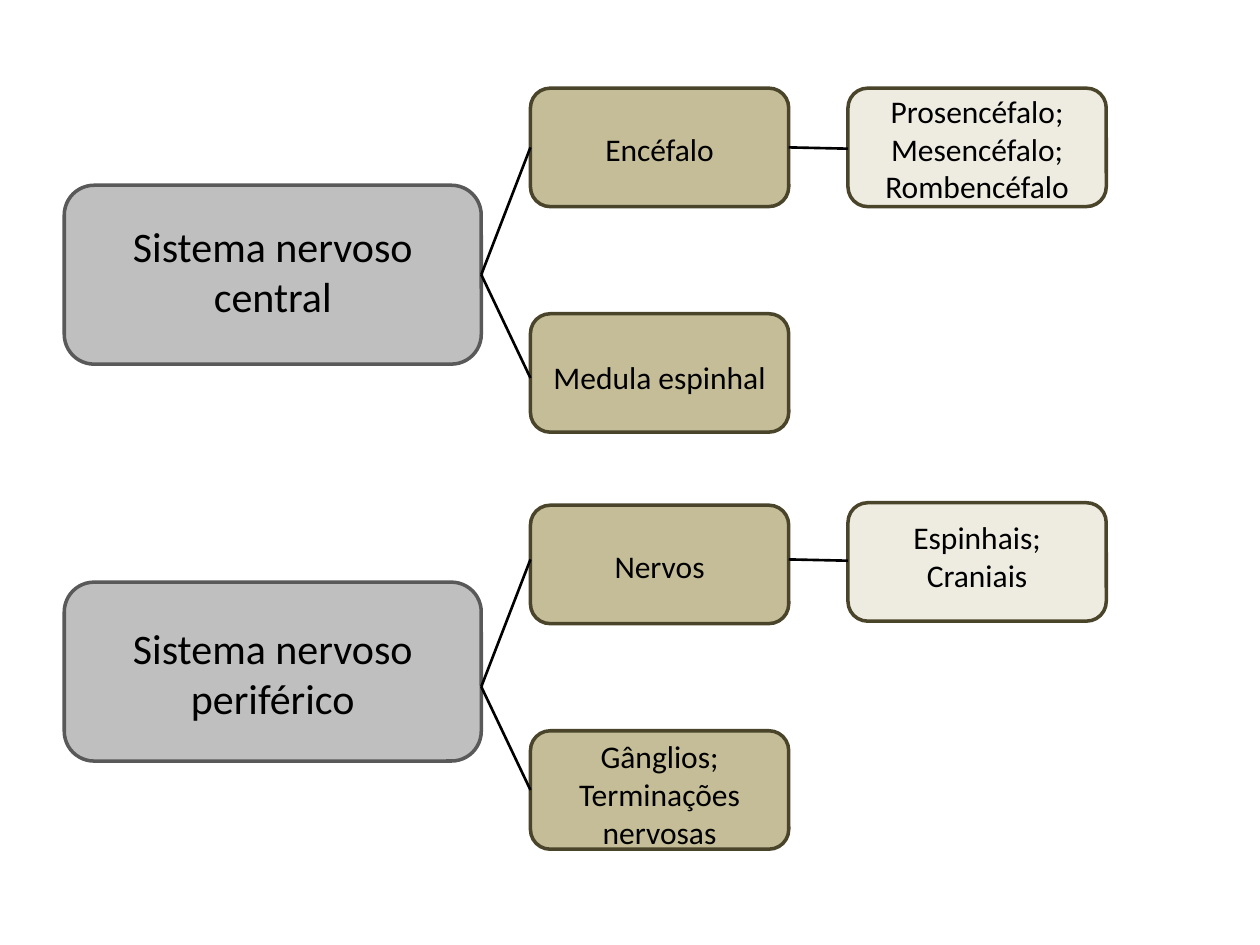
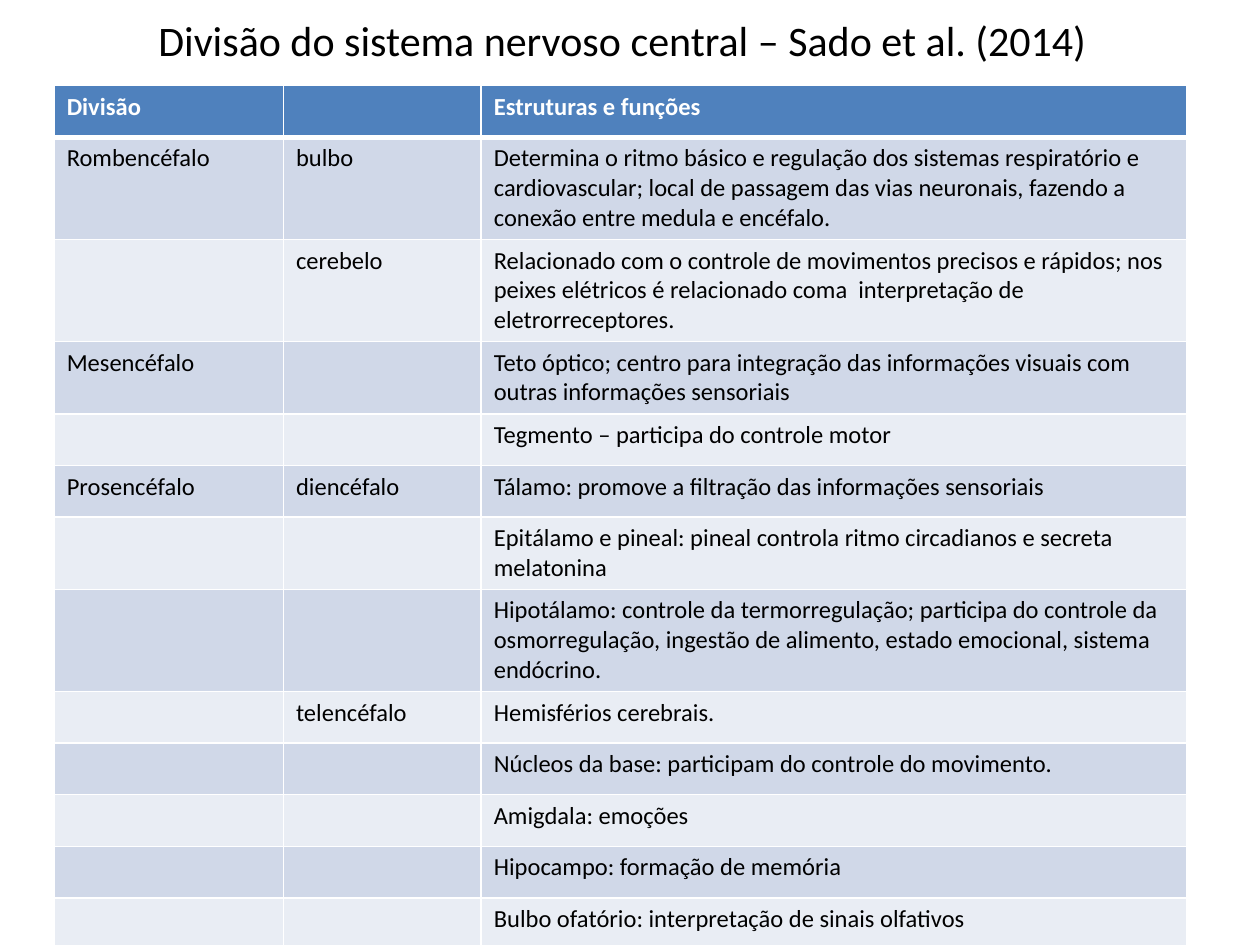
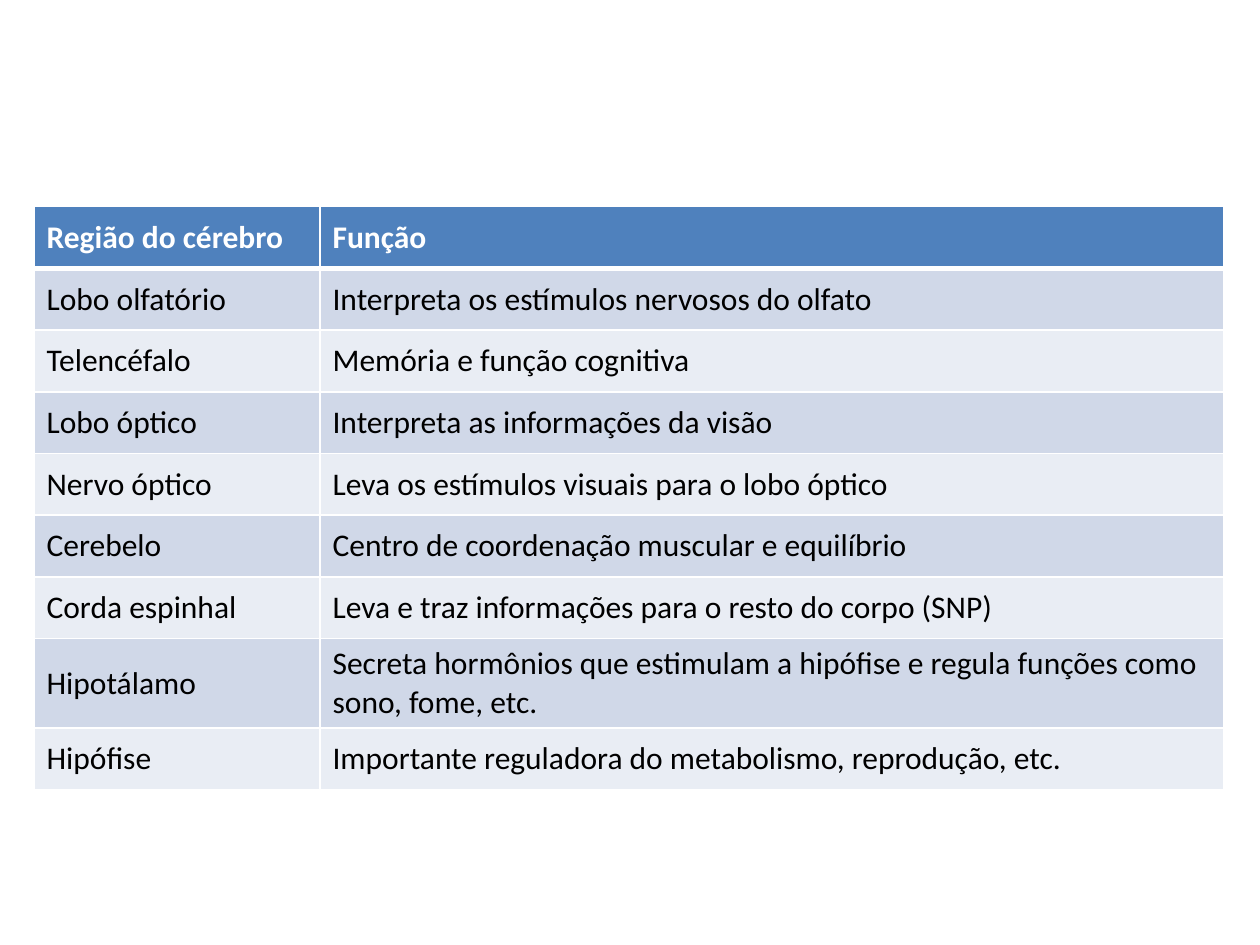
from lxml import etree
from pptx import Presentation
from pptx.dml.color import RGBColor
from pptx.enum import shapes, text
from pptx.oxml import ns
from pptx.util import Inches, Pt

FONT = "Calibri"
COLORS = {
    "black": "000000", "white": "FFFFFF",
    "system": "BFBFBF", "system_edge": "595959",
    "part": "C4BD97", "detail": "EEECE1", "part_edge": "4A452A",
    "header": "4F81BD", "band_dark": "D0D8E8", "band_light": "E9EDF4",
}
TITLE_ONLY, BLANK = 5, 6


def rgb(name):
    return RGBColor.from_string(COLORS[name])


def write(frame, content, size=18, color="black", bold=False, align=None):
    """Fill a text frame, one paragraph for each line of content."""
    for number, line in enumerate(content.split("\n")):
        paragraph = frame.add_paragraph() if number else frame.paragraphs[0]
        paragraph.alignment = align
        paragraph.font.size = Pt(size)
        if line:
            run = paragraph.add_run()
            run.text = line
            run.font.name, run.font.size = FONT, Pt(size)
            run.font.bold, run.font.color.rgb = bold, rgb(color)


def set_borders(cell, top=1, bottom=1):
    """Draw white cell borders; they must precede the fill in the XML."""
    properties = cell._tc.get_or_add_tcPr()
    widths = {"lnL": 1, "lnR": 1, "lnT": top, "lnB": bottom}
    for position, (tag, width) in enumerate(widths.items()):
        border = etree.Element(ns.qn(f"a:{tag}"), w=str(Pt(width)))
        fill = etree.SubElement(border, ns.qn("a:solidFill"))
        etree.SubElement(fill, ns.qn("a:srgbClr"), val=COLORS["white"])
        properties.insert(position, border)


class Deck:
    def __init__(self):
        self.file = Presentation()
        self.file.slide_width, self.file.slide_height = Inches(10), Inches(7.5)
        self.slide = None

    def new_slide(self, layout=BLANK):
        self.slide = self.file.slides.add_slide(self.file.slide_layouts[layout])

    def title(self, content, left, top, width, height):
        title = self.slide.shapes.title
        title.left, title.top = Inches(left), Inches(top)
        title.width, title.height = Inches(width), Inches(height)
        title.text_frame.vertical_anchor = text.MSO_ANCHOR.MIDDLE
        write(title.text_frame, content, size=24, align=text.PP_ALIGN.CENTER)

    def box(self, left, top, width, height, fill, edge):
        box = self.slide.shapes.add_shape(
            shapes.MSO_SHAPE.ROUNDED_RECTANGLE,
            Inches(left), Inches(top), Inches(width), Inches(height))
        box.shadow.inherit = False
        box.fill.solid()
        box.fill.fore_color.rgb = rgb(fill)
        box.line.color.rgb, box.line.width = rgb(edge), Pt(2)

    def label(self, content, left, top, width, height, size=18):
        frame = self.slide.shapes.add_textbox(
            Inches(left), Inches(top), Inches(width), Inches(height)).text_frame
        frame.word_wrap = True
        frame.auto_size = text.MSO_AUTO_SIZE.SHAPE_TO_FIT_TEXT
        write(frame, content, size=size, align=text.PP_ALIGN.CENTER)

    def line(self, x1, y1, x2, y2):
        line = self.slide.shapes.add_connector(
            shapes.MSO_CONNECTOR.STRAIGHT,
            Inches(x1), Inches(y1), Inches(x2), Inches(y2))
        line.line.color.rgb, line.line.width = rgb("black"), Pt(1.5)
        etree.SubElement(line._element.spPr, ns.qn("a:effectLst"))

    def table(self, rows, left, top, columns, row_height, size, anchor):
        table = self.slide.shapes.add_table(
            len(rows), len(columns), Inches(left), Inches(top),
            Inches(sum(columns)), Inches(row_height * len(rows))).table
        for column, width in zip(table.columns, columns):
            column.width = Inches(width)
        for r, row in enumerate(rows):
            table.rows[r].height = Inches(row_height)
            header = r == 0
            band = "header" if header else "band_dark" if r % 2 else "band_light"
            for c, content in enumerate(row):
                cell = table.cell(r, c)
                cell.vertical_anchor = anchor
                cell.fill.solid()
                cell.fill.fore_color.rgb = rgb(band)
                set_borders(cell, top=3 if r == 1 else 1, bottom=3 if header else 1)
                write(cell.text_frame, content, size=size, bold=header,
                      color="white" if header else "black")


# Diagram columns: left edge and width
SYSTEM_X, SYSTEM_W, SYSTEM_H = 0.51, 3.31, 1.42
PART_X, DETAIL_X, PART_W, PART_H = 4.21, 6.73, 2.05, 0.94
LABEL_INSET = 0.16

# Each system: name, box top, label top, shift of its lines, and its parts as
# (content, fill, left, box top, label top, label height)
SYSTEMS = [
    ("Sistema nervoso central", 1.47, 1.7, 0, [
        ("Encéfalo", "part", PART_X, 0.7, 0.98, 0.4),
        ("Medula espinhal", "part", PART_X, 2.49, 2.79, 0.4),
        ("Prosencéfalo;\nMesencéfalo;\nRombencéfalo", "detail", DETAIL_X, 0.7, 0.68, 1.01),
    ]),
    ("Sistema nervoso periférico", 4.62, 4.89, 3.27, [
        ("Nervos", "part", PART_X, 4.01, 4.29, 0.4),
        ("Gânglios;\nTerminações nervosas", "part", PART_X, 5.8, 5.8, 1.01),
        ("Espinhais;\nCraniais", "detail", DETAIL_X, 3.99, 4.06, 0.71),
    ]),
]

DIVISIONS = [
    ("Divisão", "", "Estruturas e funções"),
    ("Rombencéfalo", "bulbo",
     "Determina o ritmo básico e regulação dos sistemas respiratório e cardiovascular; "
     "local de passagem das vias neuronais, fazendo a conexão entre medula e encéfalo."),
    ("", "cerebelo",
     "Relacionado com o controle de movimentos precisos e rápidos; nos peixes elétricos "
     "é relacionado coma  interpretação de eletrorreceptores."),
    ("Mesencéfalo", "",
     "Teto óptico; centro para integração das informações visuais com outras "
     "informações sensoriais"),
    ("", "", "Tegmento – participa do controle motor"),
    ("Prosencéfalo", "diencéfalo",
     "Tálamo: promove a filtração das informações sensoriais"),
    ("", "", "Epitálamo e pineal: pineal controla ritmo circadianos e secreta melatonina"),
    ("", "",
     "Hipotálamo: controle da termorregulação; participa do controle da osmorregulação, "
     "ingestão de alimento, estado emocional, sistema endócrino."),
    ("", "telencéfalo", "Hemisférios cerebrais."),
    ("", "", "Núcleos da base: participam do controle do movimento."),
    ("", "", "Amigdala: emoções"),
    ("", "", "Hipocampo: formação de memória"),
    ("", "", "Bulbo ofatório: interpretação de sinais olfativos"),
]

BRAIN_REGIONS = [
    ("Região do cérebro", "Função"),
    ("Lobo olfatório", "Interpreta os estímulos nervosos do olfato"),
    ("Telencéfalo", "Memória e função cognitiva"),
    ("Lobo óptico", "Interpreta as informações da visão"),
    ("Nervo óptico", "Leva os estímulos visuais para o lobo óptico"),
    ("Cerebelo", "Centro de coordenação muscular e equilíbrio"),
    ("Corda espinhal", "Leva e traz informações para o resto do corpo (SNP)"),
    ("Hipotálamo",
     "Secreta hormônios que estimulam a hipófise e regula funções como sono, fome, etc."),
    ("Hipófise", "Importante reguladora do metabolismo, reprodução, etc."),
]


def main():
    deck = Deck()

    # Slide 1: the nervous system as a tree
    deck.new_slide()
    for name, top, label_top, shift, parts in SYSTEMS:
        deck.box(SYSTEM_X, top, SYSTEM_W, SYSTEM_H, "system", "system_edge")
        deck.label(name, SYSTEM_X + LABEL_INSET, label_top,
                   SYSTEM_W - 2 * LABEL_INSET, 0.91, size=24)
        for content, fill, left, part_top, part_label_top, label_height in parts:
            deck.box(left, part_top, PART_W, PART_H, fill, "part_edge")
            deck.label(content, left, part_label_top, PART_W, label_height)
        system_right, part_right = SYSTEM_X + SYSTEM_W, PART_X + PART_W
        for branch_y in (1.17, 3):
            deck.line(system_right, 2.18 + shift, PART_X, branch_y + shift)
        deck.line(part_right, 1.17 + shift, DETAIL_X, 1.18 + shift)

    # Slide 2: divisions of the central nervous system
    deck.new_slide(TITLE_ONLY)
    deck.title("Divisão do sistema nervoso central – Sado et al. (2014)",
               0, -0.11, 9.88, 0.85)
    deck.table(DIVISIONS, 0.43, 0.68, (1.82, 1.57, 5.6), 0.41, 14,
               text.MSO_ANCHOR.TOP)

    # Slide 3: brain regions and their functions
    deck.new_slide()
    deck.table(BRAIN_REGIONS, 0.27, 1.64, (2.27, 7.17), 0.49, 18,
               text.MSO_ANCHOR.MIDDLE)

    deck.file.save("out.pptx")


if __name__ == "__main__":
    main()
